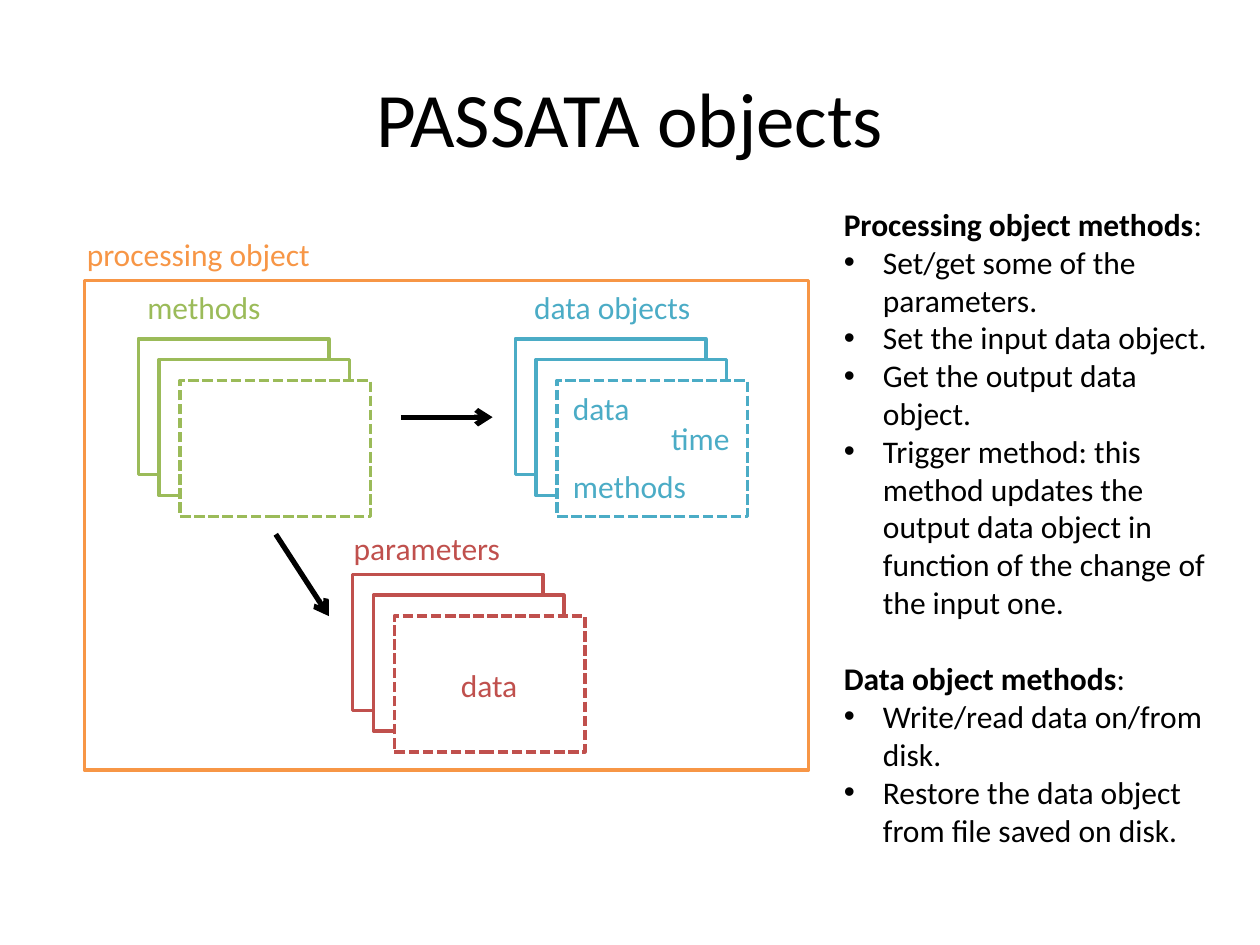
from dataclasses import dataclass

from lxml.etree import SubElement
from pptx import Presentation
from pptx.dml.color import RGBColor
from pptx.enum.dml import MSO_LINE
from pptx.enum.shapes import MSO_CONNECTOR, MSO_SHAPE
from pptx.enum.text import MSO_ANCHOR, MSO_AUTO_SIZE, PP_ALIGN
from pptx.oxml.ns import qn
from pptx.util import Cm, Pt


@dataclass(frozen=True)
class Theme:
    font: str = "Calibri"
    black: RGBColor = RGBColor(0x00, 0x00, 0x00)
    white: RGBColor = RGBColor(0xFF, 0xFF, 0xFF)
    orange: RGBColor = RGBColor(0xF7, 0x96, 0x46)
    blue: RGBColor = RGBColor(0x4B, 0xAC, 0xC6)
    green: RGBColor = RGBColor(0x9B, 0xBB, 0x59)
    red: RGBColor = RGBColor(0xC0, 0x50, 0x4D)
    title_size: Pt = Pt(44)
    text_size: Pt = Pt(18)
    outline: Pt = Pt(2)
    arrow: Pt = Pt(3)


@dataclass(frozen=True)
class Stack:
    left: float
    top: float
    color: RGBColor


@dataclass(frozen=True)
class Label:
    text: str
    left: float
    top: float
    width: float
    color: RGBColor


@dataclass(frozen=True)
class Arrow:
    start: tuple[float, float]
    end: tuple[float, float]


@dataclass(frozen=True)
class Section:
    heading: str
    bullets: tuple[str, ...]


THEME = Theme()
CARD_WIDTH, CARD_HEIGHT = 3.84, 2.74
CARD_COUNT, CARD_STEP = 3, 0.42
LABEL_HEIGHT = 1.02
BULLET_INDENT = Cm(0.79)

STACKS = (
    Stack(10.39, 6.83, THEME.blue),
    Stack(2.79, 6.83, THEME.green),
    Stack(7.11, 11.58, THEME.red),
)
LABELS = (
    Label("processing object", 1.5, 4.62, 5.08, THEME.orange),
    Label("data objects", 10.52, 5.69, 3.71, THEME.blue),
    Label("methods", 2.72, 5.69, 2.82, THEME.green),
    Label("parameters", 6.88, 10.54, 3.53, THEME.red),
    Label("data", 11.3, 7.72, 1.68, THEME.blue),
    Label("time", 13.28, 8.33, 1.7, THEME.blue),
    Label("methods", 11.3, 9.3, 2.82, THEME.blue),
    Label("data", 9.04, 13.31, 1.68, THEME.red),
)
ARROWS = (
    Arrow((5.56, 10.77), (6.63, 12.42)),
    Arrow((8.08, 8.41), (9.93, 8.41)),
)
SECTIONS = (
    Section("Processing object methods", (
        "Set/get some of the parameters.",
        "Set the input data object.",
        "Get the output data object.",
        "Trigger method: this method updates the output data object "
        "in function of the change of the input one.",
    )),
    Section("Data object methods", (
        "Write/read data on/from disk.",
        "Restore the data object from file saved on disk.",
    )),
)


def set_font(para, size: Pt, color: RGBColor) -> None:
    para.font.name = THEME.font
    para.font.size = size
    para.font.color.rgb = color


def add_box(shapes, left: float, top: float, width: float, height: float,
            color: RGBColor):
    box = shapes.add_shape(MSO_SHAPE.RECTANGLE, Cm(left), Cm(top),
                           Cm(width), Cm(height))
    box.shadow.inherit = False
    box.fill.solid()
    box.fill.fore_color.rgb = THEME.white
    box.line.color.rgb = color
    box.line.width = THEME.outline
    return box


def add_stack(page, stack: Stack) -> None:
    """Draw overlapping cards, the front one dashed."""
    cards = page.shapes.add_group_shape().shapes
    for index in range(CARD_COUNT):
        shift = index * CARD_STEP
        card = add_box(cards, stack.left + shift, stack.top + shift,
                       CARD_WIDTH, CARD_HEIGHT, stack.color)
    card.line.dash_style = MSO_LINE.SQUARE_DOT


def add_label(page, label: Label) -> None:
    box = page.shapes.add_textbox(Cm(label.left), Cm(label.top),
                                  Cm(label.width), Cm(LABEL_HEIGHT))
    box.text_frame.word_wrap = False
    box.text_frame.auto_size = MSO_AUTO_SIZE.SHAPE_TO_FIT_TEXT
    para = box.text_frame.paragraphs[0]
    para.text = label.text
    set_font(para, THEME.text_size, label.color)


def add_arrow(page, arrow: Arrow) -> None:
    points = [Cm(value) for value in arrow.start + arrow.end]
    line = page.shapes.add_connector(MSO_CONNECTOR.STRAIGHT, *points)
    line.line.color.rgb = THEME.black
    line.line.width = THEME.arrow
    properties = line._element.spPr
    SubElement(properties.find(qn("a:ln")), qn("a:tailEnd"), type="arrow")
    SubElement(properties, qn("a:effectLst"))


def add_title(page, text: str) -> None:
    box = page.shapes.add_textbox(Cm(1.27), Cm(0.76), Cm(22.86), Cm(3.18))
    box.text_frame.word_wrap = True
    box.text_frame.vertical_anchor = MSO_ANCHOR.MIDDLE
    para = box.text_frame.paragraphs[0]
    para.text = text
    para.alignment = PP_ALIGN.CENTER
    set_font(para, THEME.title_size, THEME.black)


def make_bullet(para) -> None:
    properties = para._p.get_or_add_pPr()
    properties.set("marL", str(BULLET_INDENT))
    properties.set("indent", str(-BULLET_INDENT))
    SubElement(properties, qn("a:buFont"), typeface="Arial")
    SubElement(properties, qn("a:buChar"), char="•")


def add_sections(page, sections: tuple[Section, ...]) -> None:
    box = page.shapes.add_textbox(Cm(16.76), Cm(4.01), Cm(8.26), Cm(13.34))
    frame = box.text_frame
    frame.word_wrap = True
    frame.auto_size = MSO_AUTO_SIZE.SHAPE_TO_FIT_TEXT
    for index, section in enumerate(sections):
        para = frame.add_paragraph() if index else frame.paragraphs[0]
        if index:
            para.space_before = Pt(22)
        span = para.add_run()
        span.text = section.heading
        span.font.bold = True
        para.add_run().text = ":"
        set_font(para, THEME.text_size, THEME.black)
        for text in section.bullets:
            para = frame.add_paragraph()
            para.text = text
            make_bullet(para)
            set_font(para, THEME.text_size, THEME.black)


def main() -> None:
    deck = Presentation()
    deck.slide_width, deck.slide_height = Cm(25.4), Cm(19.05)
    page = deck.slides.add_slide(deck.slide_layouts[6])
    add_box(page.shapes, 1.7, 5.66, 14.6, 9.86, THEME.orange)
    for stack in STACKS:
        add_stack(page, stack)
    for label in LABELS:
        add_label(page, label)
    for arrow in ARROWS:
        add_arrow(page, arrow)
    add_title(page, "PASSATA objects")
    add_sections(page, SECTIONS)
    deck.save("out.pptx")


if __name__ == "__main__":
    main()
